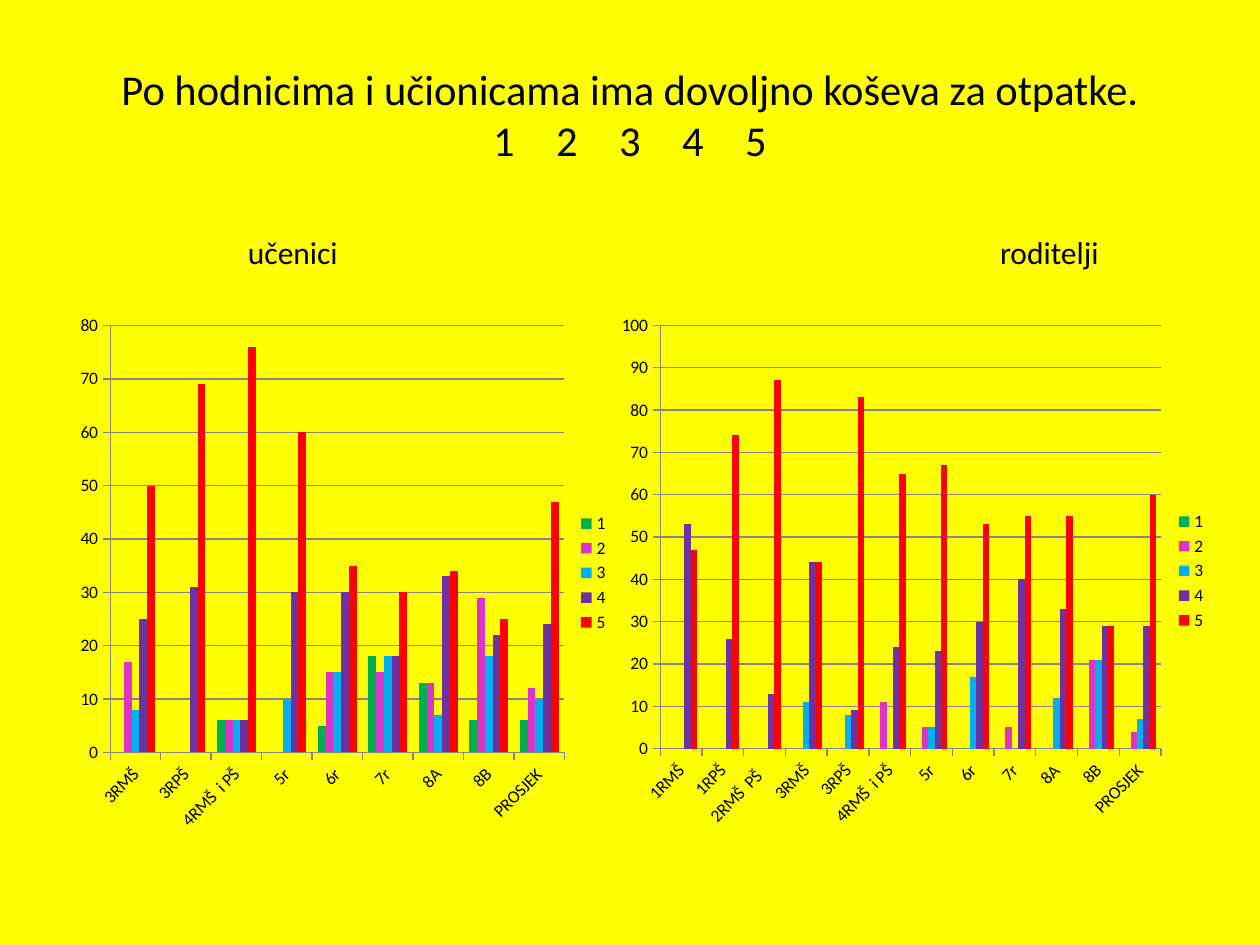
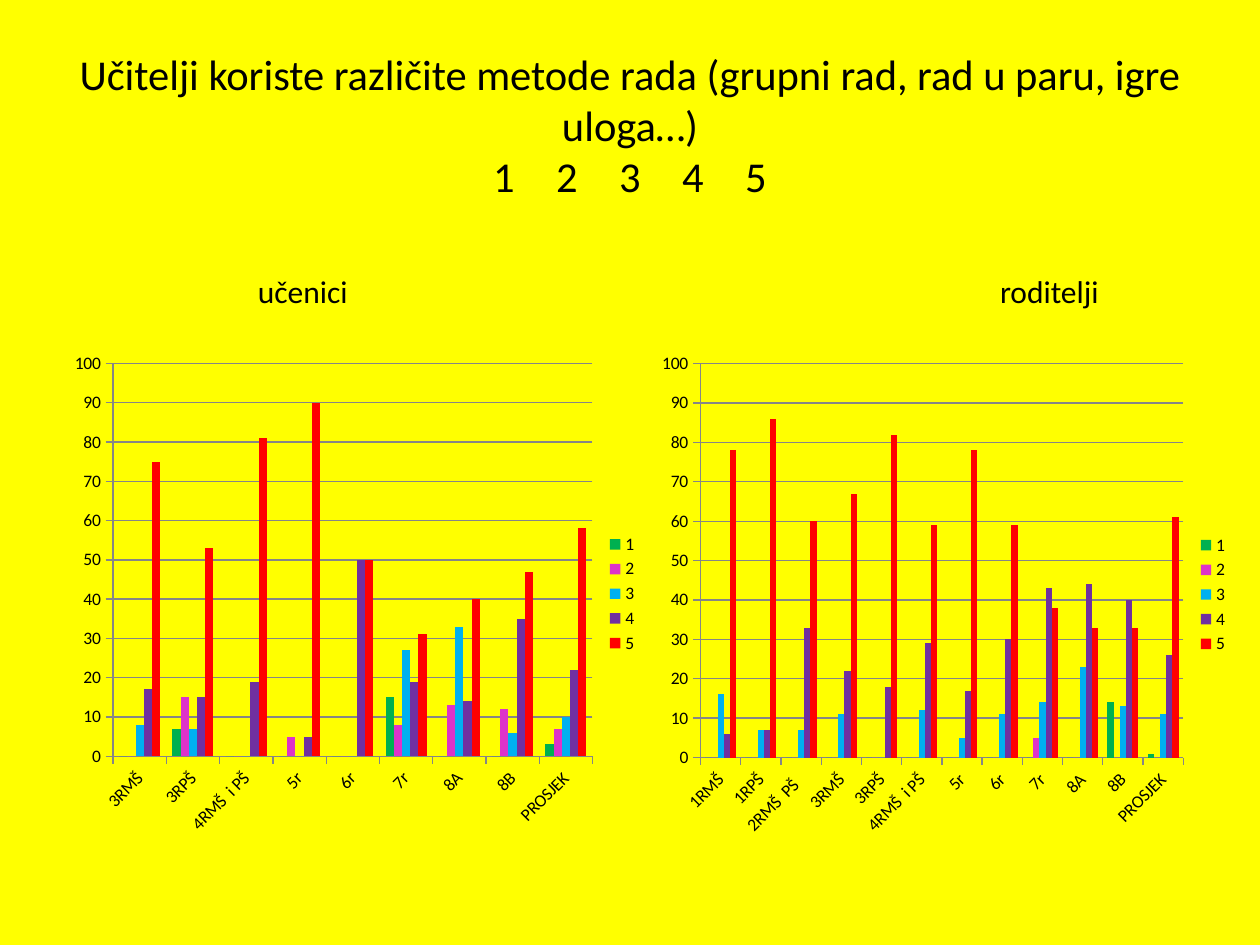
import dataclasses

import lxml.etree
import pptx
import pptx.chart.data
import pptx.dml.color
import pptx.enum.chart
import pptx.enum.text
import pptx.oxml.ns
import pptx.util

Cm = pptx.util.Cm
Pt = pptx.util.Pt
ALIGN = pptx.enum.text.PP_ALIGN

COLOURS = {
    "page": "FFFF00",
    "text": "000000",
    "grid": "868686",
    "1": "00B050",
    "2": "DD33C9",
    "3": "00B0F0",
    "4": "7030A0",
    "5": "FF0000",
}
FONT = "Calibri"
TITLE_SIZE = 24.3
TITLE_END_SIZE = 36
GRADES = "12345"
CAPTION_RISE = 1.57
CAPTION_HEIGHT = 1.02

PUPIL_CLASSES = ["3RMŠ", "3RPŠ", "4RMŠ  i PŠ", "5r", "6r", "7r", "8A", "8B", "PROSJEK"]
PARENT_CLASSES = ["1RMŠ", "1RPŠ", "2RMŠ  PŠ  "] + PUPIL_CLASSES


@dataclasses.dataclass
class Box:
    left: float
    top: float
    width: float
    height: float

    def lengths(self):
        return [Cm(value) for value in dataclasses.astuple(self)]


@dataclasses.dataclass
class Panel:
    caption: str
    align: ALIGN
    caption_left: float
    caption_right: float
    box: Box
    classes: list
    grades: list
    top_value: int = 100


def colour(name):
    return pptx.dml.color.RGBColor.from_string(COLOURS[name])


def apply(target, values):
    for name, value in values.items():
        setattr(target, name, value)


def paint(fill, name):
    fill.solid()
    fill.fore_color.rgb = colour(name)


def format_font(font, size):
    apply(font, {"name": FONT, "size": Pt(size)})
    font.color.rgb = colour("text")


def add_title(page, box, question):
    title = page.shapes.title
    apply(title, dict(zip(("left", "top", "width", "height"), box.lengths())))
    frame = title.text_frame
    apply(frame, {
        "word_wrap": True,
        "auto_size": pptx.enum.text.MSO_AUTO_SIZE.NONE,
        "vertical_anchor": pptx.enum.text.MSO_ANCHOR.MIDDLE,
    })
    para = frame.paragraphs[0]
    para.alignment = ALIGN.CENTER
    qn = pptx.oxml.ns.qn
    size = str(int(TITLE_SIZE * 100))
    for line in (question, "\t".join(GRADES)):
        span = para.add_run()
        span.text = line
        format_font(span.font, TITLE_SIZE)
        para.add_line_break()
        lxml.etree.SubElement(para._p[-1], qn("a:rPr"), sz=size)
    lxml.etree.SubElement(para._p, qn("a:endParaRPr"), sz=str(TITLE_END_SIZE * 100))


def add_caption(page, panel):
    box = Box(panel.caption_left, panel.box.top - CAPTION_RISE,
              panel.caption_right - panel.caption_left, CAPTION_HEIGHT)
    frame = page.shapes.add_textbox(*box.lengths()).text_frame
    frame.word_wrap = True
    para = frame.paragraphs[0]
    para.alignment = panel.align
    span = para.add_run()
    span.text = panel.caption
    format_font(span.font, 18)


def format_axis(axis):
    axis.major_tick_mark = pptx.enum.chart.XL_TICK_MARK.OUTSIDE
    apply(axis.format.line, {"width": Pt(0.75)})
    axis.format.line.color.rgb = colour("grid")
    format_font(axis.tick_labels.font, 10)


def add_grade_chart(page, panel):
    data = pptx.chart.data.CategoryChartData()
    data.categories = panel.classes
    for grade, values in zip(GRADES, panel.grades):
        data.add_series(grade, values)
    chart = page.shapes.add_chart(
        pptx.enum.chart.XL_CHART_TYPE.COLUMN_CLUSTERED, *panel.box.lengths(), data).chart
    apply(chart, {"has_title": False, "has_legend": True})
    format_font(chart.font, 10)
    apply(chart.legend, {
        "position": pptx.enum.chart.XL_LEGEND_POSITION.RIGHT,
        "include_in_layout": False,
    })
    plot = chart.plots[0]
    apply(plot, {"gap_width": 150, "overlap": 0, "vary_by_categories": False})
    for series in plot.series:
        paint(series.format.fill, series.name)
        series.invert_if_negative = False
    for axis in (chart.category_axis, chart.value_axis):
        format_axis(axis)
    chart.category_axis._element.get_or_add_txPr().bodyPr.set("rot", "-2700000")
    apply(chart.value_axis, {
        "minimum_scale": 0,
        "maximum_scale": panel.top_value,
        "major_unit": 10,
        "has_major_gridlines": True,
    })
    grid = chart.value_axis.major_gridlines.format.line
    grid.width = Pt(0.75)
    grid.color.rgb = colour("grid")


def add_question_page(deck, title_box, question, panels):
    page = deck.slides.add_slide(deck.slide_layouts.get_by_name("Title Only"))
    add_title(page, title_box, question)
    for panel in panels:
        add_grade_chart(page, panel)
    for panel in panels:
        add_caption(page, panel)


def pupils(caption_left, box, grades, top_value=100):
    return Panel("učenici", ALIGN.LEFT, caption_left, 13.87, box,
                 PUPIL_CLASSES, grades, top_value)


def parents(box, grades):
    return Panel("roditelji", ALIGN.RIGHT, 11.43, 22.4, box, PARENT_CLASSES, grades)


def main():
    deck = pptx.Presentation()
    apply(deck, {"slide_width": Cm(25.4), "slide_height": Cm(19.05)})
    paint(deck.slide_master.background.fill, "page")

    add_question_page(
        deck, Box(1.27, 2.18, 22.86, 1.75),
        "Po hodnicima i učionicama ima dovoljno koševa za otpatke.",
        [
            pupils(4.75, Box(1.4, 6.15, 11.13, 10.8), [
                [0, 0, 6, 0, 5, 18, 13, 6, 6],
                [17, 0, 6, 0, 15, 15, 13, 29, 12],
                [8, 0, 6, 10, 15, 18, 7, 18, 10],
                [25, 31, 6, 30, 30, 18, 33, 22, 24],
                [50, 69, 76, 60, 35, 30, 34, 25, 47],
            ], 80),
            parents(Box(12.29, 6.15, 12.29, 10.72), [
                [0] * len(PARENT_CLASSES),
                [0, 0, 0, 0, 0, 11, 5, 0, 5, 0, 21, 4],
                [0, 0, 0, 11, 8, 0, 5, 17, 0, 12, 21, 7],
                [53, 26, 13, 44, 9, 24, 23, 30, 40, 33, 29, 29],
                [47, 74, 87, 44, 83, 65, 67, 53, 55, 55, 29, 60],
            ]),
        ])

    add_question_page(
        deck, Box(1.27, 2.59, 22.86, 1.35),
        "Učitelji koriste različite metode rada (grupni rad, rad u paru, igre uloga…)",
        [
            pupils(4.95, Box(1.27, 6.93, 11.84, 10.08), [
                [0, 7, 0, 0, 0, 15, 0, 0, 3],
                [0, 15, 0, 5, 0, 8, 13, 12, 7],
                [8, 7, 0, 0, 0, 27, 33, 6, 10],
                [17, 15, 19, 5, 50, 19, 14, 35, 22],
                [75, 53, 81, 90, 50, 31, 40, 47, 58],
            ]),
            parents(Box(13.11, 6.93, 11.91, 10.11), [
                [0, 0, 0, 0, 0, 0, 0, 0, 0, 0, 14, 1],
                [0, 0, 0, 0, 0, 0, 0, 0, 5, 0, 0, 0],
                [16, 7, 7, 11, 0, 12, 5, 11, 14, 23, 13, 11],
                [6, 7, 33, 22, 18, 29, 17, 30, 43, 44, 40, 26],
                [78, 86, 60, 67, 82, 59, 78, 59, 38, 33, 33, 61],
            ]),
        ])
    deck.save("out.pptx")


if __name__ == "__main__":
    main()
